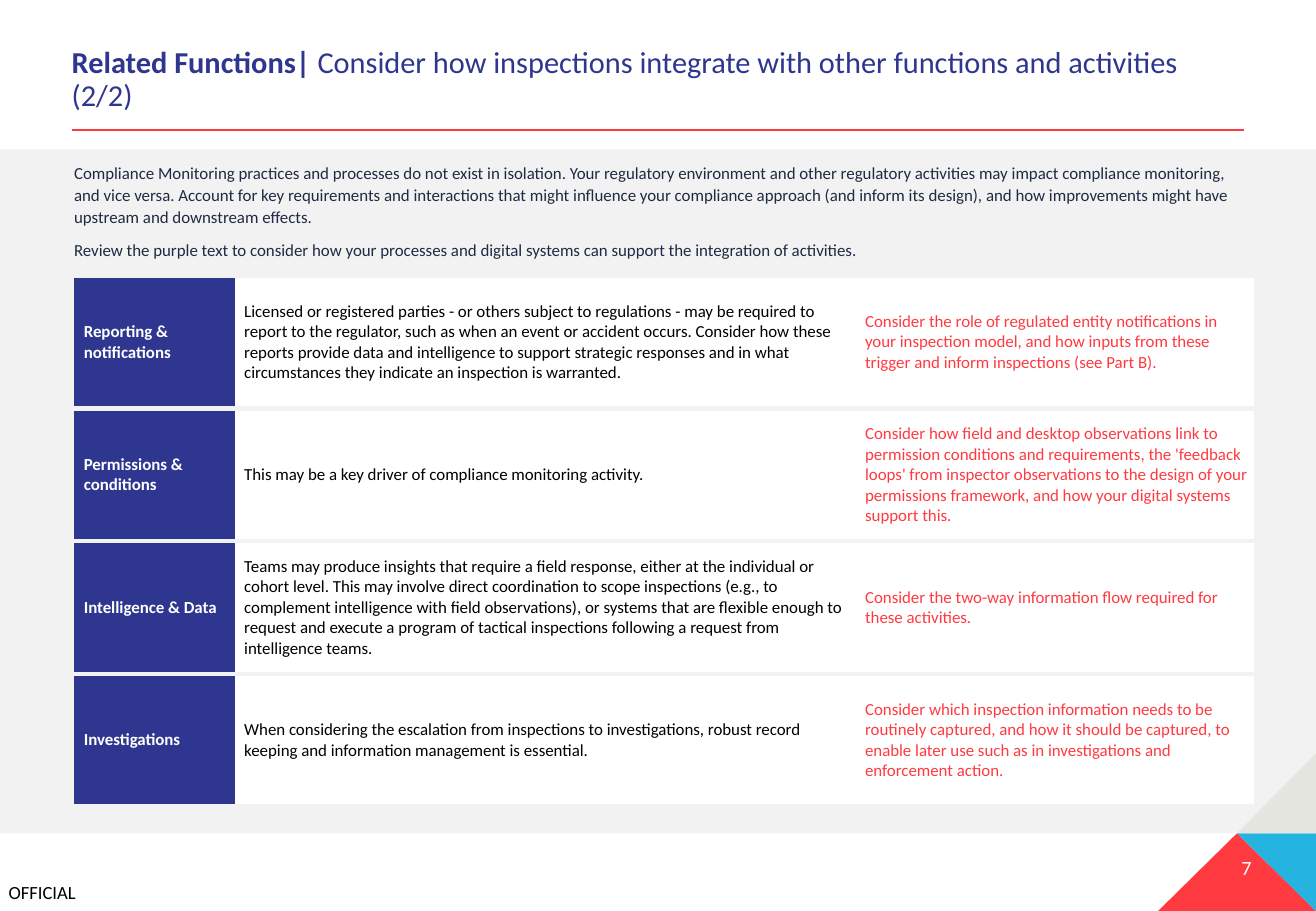
from dataclasses import dataclass

from lxml.etree import SubElement
from pptx import Presentation
from pptx.dml.color import RGBColor
from pptx.enum.shapes import MSO_CONNECTOR, MSO_SHAPE
from pptx.enum.text import MSO_ANCHOR, PP_ALIGN
from pptx.oxml import parse_xml
from pptx.oxml.ns import nsdecls, qn
from pptx.util import Inches, Pt


@dataclass(frozen=True)
class Theme:
    font: str = "Calibri"
    navy: str = "2E368F"
    red: str = "FF3A40"
    cyan: str = "25B3E0"
    stone: str = "E6E6E1"
    panel: str = "F2F2F2"
    ink: str = "1F2A44"
    black: str = "000000"
    white: str = "FFFFFF"
    title_size: int = 18
    number_size: int = 12
    label_size: int = 11
    body_size: int = 10
    rule_width: float = 1.25
    gap_width: int = 3


class SlideBuilder:
    def __init__(self, presentation, theme):
        self.theme = theme
        self.width = presentation.slide_width
        self.height = presentation.slide_height
        self.slide = presentation.slides.add_slide(presentation.slide_layouts[6])

    def across(self, percent):
        return round(self.width * percent / 100)

    def down(self, percent):
        return round(self.height * percent / 100)

    def box(self, left, top, width, height):
        return self.across(left), self.down(top), self.across(width), self.down(height)

    def paint(self, shape, color):
        shape.fill.solid()
        shape.fill.fore_color.rgb = RGBColor.from_string(color)
        shape.line.fill.background()
        shape.shadow.inherit = False

    def rectangle(self, bounds, color):
        self.paint(self.slide.shapes.add_shape(MSO_SHAPE.RECTANGLE, *self.box(*bounds)), color)

    def triangle(self, corners, color):
        points = [(self.across(x), self.down(y)) for x, y in corners]
        builder = self.slide.shapes.build_freeform(*points[0])
        builder.add_line_segments(points[1:], close=True)
        self.paint(builder.convert_to_shape(), color)

    def rule(self, left, right, top, color):
        connector = self.slide.shapes.add_connector(
            MSO_CONNECTOR.STRAIGHT,
            self.across(left), self.down(top), self.across(right), self.down(top))
        connector.line.color.rgb = RGBColor.from_string(color)
        connector.line.width = Pt(self.theme.rule_width)
        SubElement(connector._element.spPr, qn("a:effectLst"))

    def style(self, paragraph, size, color, bold=None):
        paragraph.font.name = self.theme.font
        paragraph.font.size = Pt(size)
        paragraph.font.color.rgb = RGBColor.from_string(color)
        paragraph.font.bold = bold

    def text(self, bounds, paragraphs, size, color, align=PP_ALIGN.LEFT,
             anchor=MSO_ANCHOR.TOP, padding=0.05, line_spacing=None, gap=0):
        frame = self.slide.shapes.add_textbox(*self.box(*bounds)).text_frame
        frame.word_wrap = True
        frame.vertical_anchor = anchor
        frame.margin_left = frame.margin_right = 0
        frame.margin_top = frame.margin_bottom = Inches(padding)
        for index, runs in enumerate(paragraphs):
            paragraph = frame.add_paragraph() if index else frame.paragraphs[0]
            paragraph.alignment = align
            paragraph.line_spacing = line_spacing
            if index:
                paragraph.space_before = Pt(gap)
            self.style(paragraph, size, color)
            for content, bold in runs:
                run = paragraph.add_run()
                run.text = content
                if bold:
                    run.font.bold = True

    def borders(self, cell):
        gap = (f'<a:solidFill><a:srgbClr val="{self.theme.panel}"/></a:solidFill>',
               Pt(self.theme.gap_width))
        bare = ("<a:noFill/>", 0)
        sides = {"lnL": bare, "lnR": bare, "lnT": gap, "lnB": gap}
        properties = cell._tc.get_or_add_tcPr()
        for index, (side, (fill, width)) in enumerate(sides.items()):
            properties.insert(index, parse_xml(
                f'<a:{side} {nsdecls("a")} w="{width}">{fill}</a:{side}>'))

    def table(self, bounds, widths, rows, looks):
        table = self.slide.shapes.add_table(len(rows), len(widths), *self.box(*bounds)).table
        table.first_row = table.horz_banding = False
        for column, width in zip(table.columns, widths):
            column.width = self.across(width)
        for row_index, contents in enumerate(rows):
            for column_index, (content, look) in enumerate(zip(contents, looks)):
                fill, color, bold = look
                cell = table.cell(row_index, column_index)
                cell.text = content
                cell.vertical_anchor = MSO_ANCHOR.MIDDLE
                cell.margin_left, cell.margin_right = Inches(0.08), Inches(0.04)
                cell.margin_top = cell.margin_bottom = Inches(0.02)
                cell.fill.solid()
                cell.fill.fore_color.rgb = RGBColor.from_string(fill)
                self.style(cell.text_frame.paragraphs[0], self.theme.body_size, color, bold)
                self.borders(cell)


INTRODUCTION = [
    "Compliance Monitoring practices and processes do not exist in isolation. Your regulatory environment and other regulatory activities may impact compliance monitoring, and vice versa. Account for key requirements and interactions that might influence your compliance approach (and inform its design), and how improvements might have upstream and downstream effects.",
    "Review the purple text to consider how your processes and digital systems can support the integration of activities.",
]

FUNCTIONS = [
    ("Reporting & notifications",
     "Licensed or registered parties - or others subject to regulations - may be required to report to the regulator, such as when an event or accident occurs. Consider how these reports provide data and intelligence to support strategic responses and in what circumstances they indicate an inspection is warranted.",
     "Consider the role of regulated entity notifications in your inspection model, and how inputs from these trigger and inform inspections (see Part B)."),
    ("Permissions & conditions",
     "This may be a key driver of compliance monitoring activity.",
     "Consider how field and desktop observations link to permission conditions and requirements, the 'feedback loops' from inspector observations to the design of your permissions framework, and how your digital systems support this."),
    ("Intelligence & Data",
     "Teams may produce insights that require a field response, either at the individual or cohort level. This may involve direct coordination to scope inspections (e.g., to complement intelligence with field observations), or systems that are flexible enough to request and execute a program of tactical inspections following a request from intelligence teams.",
     "Consider the two-way information flow required for these activities."),
    ("Investigations",
     "When considering the escalation from inspections to investigations, robust record keeping and information management is essential.",
     "Consider which inspection information needs to be routinely captured, and how it should be captured, to enable later use such as in investigations and enforcement action."),
]


def main():
    theme = Theme()
    presentation = Presentation()
    presentation.slide_width = Inches(10.83)
    presentation.slide_height = Inches(7.5)
    builder = SlideBuilder(presentation, theme)

    builder.text((0.65, 96.67, 7, 2.4), [[("OFFICIAL", False)]],
                 theme.label_size, theme.black, padding=0)
    builder.rectangle((0, 16.4, 100, 75.07), theme.panel)

    left, middle, right = 88, 94, 100
    upper, lower, bottom = 82.67, 91.47, 100
    builder.triangle([(middle, lower), (left, bottom), (right, bottom)], theme.red)
    builder.triangle([(right, lower), (middle, lower), (right, bottom)], theme.cyan)
    builder.triangle([(right, upper), (middle, lower), (right, lower)], theme.stone)
    builder.text((87.07, 93.2, 8.03, 4), [[("7", False)]],
                 theme.number_size, theme.white, align=PP_ALIGN.RIGHT)

    builder.rule(5.45, 94.55, 14.27, theme.red)
    builder.text(
        (5.45, 4.4, 89.1, 8.67),
        [[("Related Functions| ", True),
          ("Consider how inspections integrate with other functions and activities (2/2)", False)]],
        theme.title_size, theme.navy, anchor=MSO_ANCHOR.BOTTOM, line_spacing=0.9)
    builder.table(
        (5.63, 30.27, 89.66, 58.27), (12.19, 47.18, 30.29), FUNCTIONS,
        [(theme.navy, theme.white, True),
         (theme.white, theme.black, False),
         (theme.white, theme.red, False)])
    builder.text((5.63, 16.93, 88.83, 12.93),
                 [[(content, False)] for content in INTRODUCTION],
                 theme.body_size, theme.ink, line_spacing=1.1, gap=6)
    presentation.save("out.pptx")


if __name__ == "__main__":
    main()
